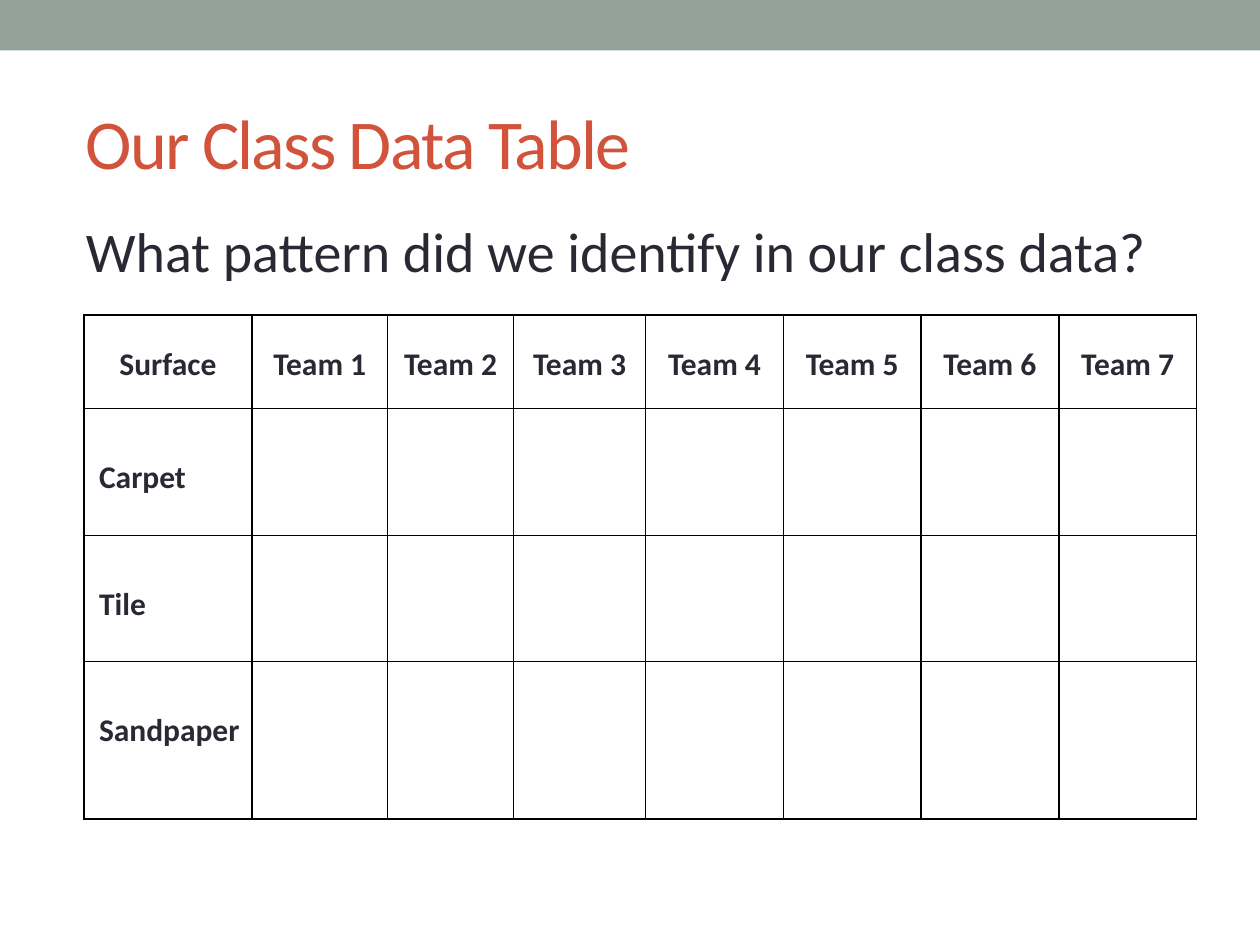
from pptx import Presentation
from pptx import util as u
from pptx.dml.color import RGBColor
from pptx.enum import shapes, text
from pptx.oxml.ns import qn
from lxml import etree

TITLE = "Our Class Data Table"
QUESTION = "What pattern did we identify in our class data?"
HEADERS = ["Surface"] + [f"Team {n}" for n in range(1, 8)]
SURFACES = ["Carpet", "Tile", "Sandpaper"]

THEME = {
    "font": "Calibri",
    "bar": "93A299",
    "title": "D2533C",
    "body": "292934",
    "border": "000000",
    "title_size": 40,
    "question_size": 32,
    "table_size": 18,
}

COL_WIDTHS = [96, 77.5, 72, 75.5] + [78.7] * 4
ROW_HEIGHTS = [53.3, 72.7, 72, 90]
TABLE_LEFT, TABLE_TOP = 48, 180
CELL_MARGIN = 5.04
LABEL_INDENT = 3.6
LABEL_TOP = 25.3


def write(tf, content, size, color, bold=False, align=None, line_spacing=None, tracking=None):
    p = tf.paragraphs[0]
    p.alignment = align
    p.line_spacing = line_spacing
    r = p.add_run()
    r.text = content
    r.font.name = THEME["font"]
    r.font.size = u.Pt(size)
    r.font.bold = bold
    r.font.color.rgb = RGBColor.from_string(color)
    if tracking is not None:
        r.font._element.set("spc", str(tracking * 100))


def add_text(s, box, content, anchor=text.MSO_ANCHOR.TOP, **style):
    tf = s.shapes.add_textbox(*map(u.Pt, box)).text_frame
    tf.word_wrap = True
    tf.vertical_anchor = anchor
    write(tf, content, **style)


def add_borders(cell, color, width=1):
    tc_pr = cell._tc.get_or_add_tcPr()
    for i, side in enumerate(("lnL", "lnR", "lnT", "lnB")):
        ln = etree.Element(qn(f"a:{side}"), w=str(u.Pt(width)))
        fill = etree.SubElement(ln, qn("a:solidFill"))
        etree.SubElement(fill, qn("a:srgbClr"), val=color)
        tc_pr.insert(i, ln)


def add_data_table(s):
    size = sum(COL_WIDTHS), sum(ROW_HEIGHTS)
    frame = s.shapes.add_table(
        len(ROW_HEIGHTS), len(COL_WIDTHS), *map(u.Pt, (TABLE_LEFT, TABLE_TOP, *size)))
    table = frame.table
    table.first_row = table.horz_banding = False
    for col, width in zip(table.columns, COL_WIDTHS):
        col.width = u.Pt(width)
    for row, height in zip(table.rows, ROW_HEIGHTS):
        row.height = u.Pt(height)
    for cell in table.iter_cells():
        cell.fill.background()
        cell.margin_left = cell.margin_right = u.Pt(CELL_MARGIN)
        cell.margin_top = cell.margin_bottom = 0
        add_borders(cell, THEME["border"])

    style = dict(size=THEME["table_size"], color=THEME["body"], bold=True, line_spacing=1.15)
    for i, header in enumerate(HEADERS):
        cell = table.cell(0, i)
        cell.vertical_anchor = text.MSO_ANCHOR.MIDDLE
        write(cell.text_frame, header, align=text.PP_ALIGN.CENTER, **style)
    for i, surface in enumerate(SURFACES, 1):
        cell = table.cell(i, 0)
        cell.margin_left = u.Pt(CELL_MARGIN + LABEL_INDENT)
        cell.margin_top = u.Pt(LABEL_TOP)
        write(cell.text_frame, surface, **style)


def main():
    prs = Presentation()
    prs.slide_width, prs.slide_height = u.Pt(720), u.Pt(540)
    s = prs.slides.add_slide(prs.slide_layouts[6])

    bar = s.shapes.add_shape(
        shapes.MSO_SHAPE.RECTANGLE, 0, 0, prs.slide_width, u.Pt(28.8))
    bar.shadow.inherit = False
    bar.fill.solid()
    bar.fill.fore_color.rgb = RGBColor.from_string(THEME["bar"])
    bar.line.fill.background()

    add_text(s, (42, 42, 642, 78), TITLE, anchor=text.MSO_ANCHOR.MIDDLE,
             size=THEME["title_size"], color=THEME["title"], tracking=-1)
    add_data_table(s)
    add_text(s, (42, 120, 636, 46), QUESTION,
             size=THEME["question_size"], color=THEME["body"])
    prs.save("out.pptx")


if __name__ == "__main__":
    main()
